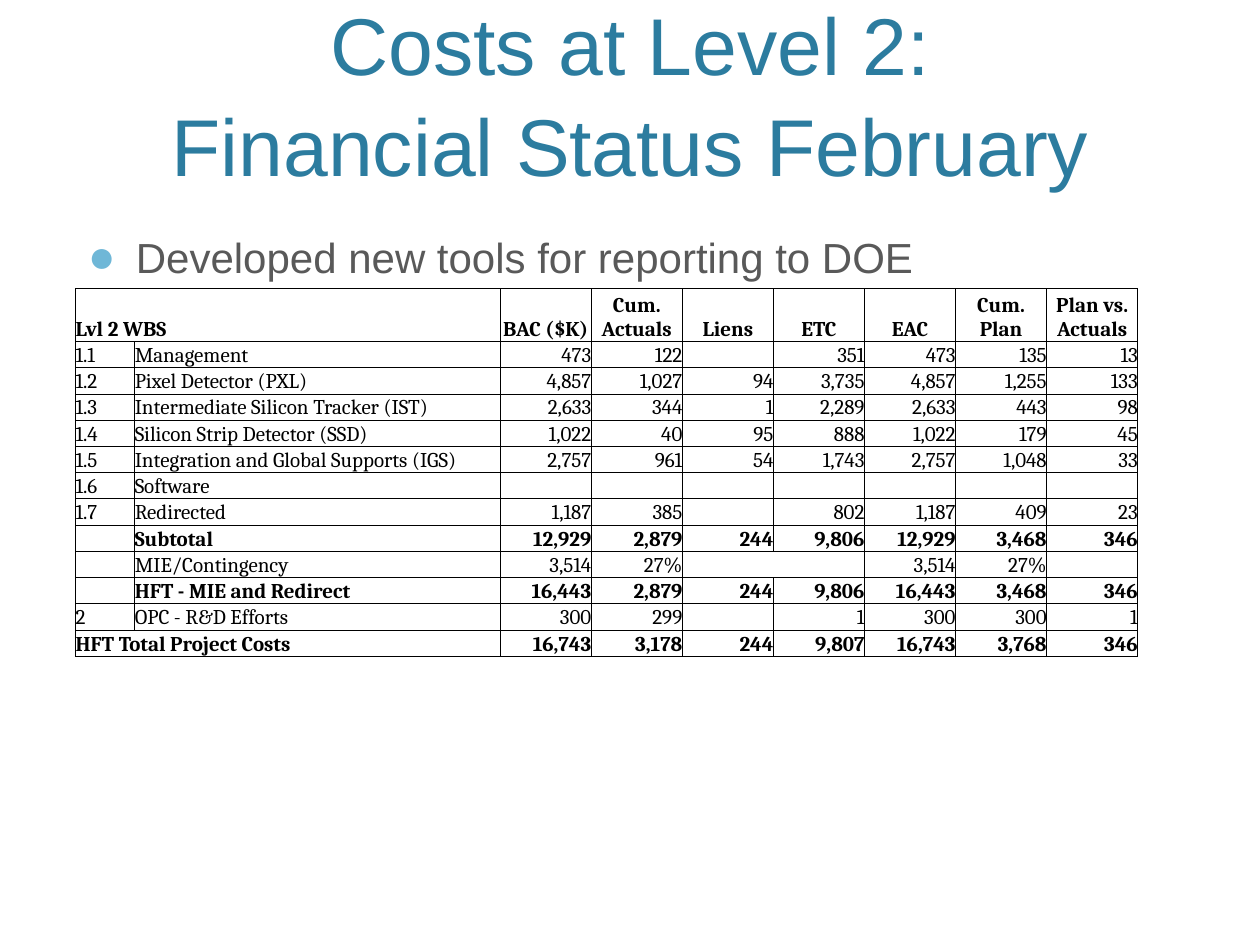
from lxml.etree import SubElement
from pptx import Presentation
from pptx.dml.color import RGBColor
from pptx.enum.text import MSO_ANCHOR, MSO_AUTO_SIZE, PP_ALIGN
from pptx.oxml.ns import qn
from pptx.util import Inches, Pt

TITLE = {"size": Pt(46), "name": "Arial", "bold": False}
BULLET = {"size": Pt(24), "name": "Arial", "bold": False}
CELL = {"size": Pt(12), "name": "Cambria"}
MARGINS = ("margin_left", "margin_top", "margin_right", "margin_bottom")

COSTS = [
    ["Lvl 2 WBS", "", "BAC ($K)", "Cum. Actuals", "Liens", "ETC", "EAC", "Cum. Plan", "Plan vs. Actuals"],
    ["1.1", "Management", "473", "122", "", "351", "473", "135", "13"],
    ["1.2", "Pixel Detector (PXL)", "4,857", "1,027", "94", "3,735", "4,857", "1,255", "133"],
    ["1.3", "Intermediate Silicon Tracker (IST)", "2,633", "344", "1", "2,289", "2,633", "443", "98"],
    ["1.4", "Silicon Strip Detector (SSD)", "1,022", "40", "95", "888", "1,022", "179", "45"],
    ["1.5", "Integration and Global Supports (IGS)", "2,757", "961", "54", "1,743", "2,757", "1,048", "33"],
    ["1.6", "Software", "", "", "", "", "", "", ""],
    ["1.7", "Redirected", "1,187", "385", "", "802", "1,187", "409", "23"],
    ["", "Subtotal", "12,929", "2,879", "244", "9,806", "12,929", "3,468", "346"],
    ["", "MIE/Contingency", "3,514", "27%", "", "", "3,514", "27%", ""],
    ["", "HFT - MIE and Redirect", "16,443", "2,879", "244", "9,806", "16,443", "3,468", "346"],
    ["2", "OPC - R&D Efforts", "300", "299", "", "1", "300", "300", "1"],
    ["HFT Total Project Costs", "", "16,743", "3,178", "244", "9,807", "16,743", "3,768", "346"],
]
BOLD_ROWS = {0, 8, 10, 12}
SPANNED_ROWS = (0, 12)
OPEN_SIDES = {(9, 4): "R", (9, 5): "L"}


def rgb(color):
    """Turn a hex string into a colour."""
    return RGBColor.from_string(color)


def set_font(font, formats, color):
    """Apply a dict of font values and a colour."""
    for key, value in formats.items():
        setattr(font, key, value)
    font.color.rgb = rgb(color)


def add_title(s, text, x, y, w, h):
    """Place and format the title placeholder in its box."""
    sp = s.shapes.title
    sp.left, sp.top, sp.width, sp.height = map(Inches, (x, y, w, h))
    tf = sp.text_frame
    tf.text = text
    tf.auto_size = MSO_AUTO_SIZE.NONE
    tf.vertical_anchor = MSO_ANCHOR.BOTTOM
    p = tf.paragraphs[0]
    p.alignment = PP_ALIGN.CENTER
    p.line_spacing = 1.05
    for r in p.runs:
        set_font(r.font, TITLE, "2C7C9F")


def add_bullet(s, text, x, y, w, h):
    """Place a bulleted statement in its box."""
    tf = s.shapes.add_textbox(*map(Inches, (x, y, w, h))).text_frame
    tf.word_wrap = True
    p = tf.paragraphs[0]
    p.line_spacing = 1.1
    p.space_before = Pt(20)
    r = p.add_run()
    r.text = text
    set_font(r.font, BULLET, "595959")
    pPr = p._p.get_or_add_pPr()
    pPr.set("marL", str(Inches(0.38)))
    pPr.set("indent", str(Inches(-0.38)))
    SubElement(SubElement(pPr, qn("a:buClr")), qn("a:srgbClr"), val="6FB7D7")
    SubElement(pPr, qn("a:buSzPct"), val="110000")
    SubElement(pPr, qn("a:buFont"), typeface="Arial")
    SubElement(pPr, qn("a:buChar"), char="●")


def set_borders(cell, open_side):
    """Draw thin black cell borders except on the open side."""
    tcPr = cell._tc.get_or_add_tcPr()
    for side in "LRTB":
        ln = SubElement(tcPr, qn(f"a:ln{side}"), w=str(Pt(0.5)))
        if side == open_side:
            SubElement(ln, qn("a:noFill"))
        else:
            fill = SubElement(ln, qn("a:solidFill"))
            SubElement(fill, qn("a:srgbClr"), val="000000")


def fill_cell(cell, text, align, bold):
    """Write one cell with its alignment and weight."""
    for margin in MARGINS:
        setattr(cell, margin, 0)
    cell.vertical_anchor = MSO_ANCHOR.BOTTOM
    cell.fill.solid()
    cell.fill.fore_color.rgb = rgb("FFFFFF")
    p = cell.text_frame.paragraphs[0]
    p.alignment = align
    if text:
        r = p.add_run()
        r.text = text
        set_font(r.font, {**CELL, "bold": bold}, "000000")
    else:
        SubElement(p._p, qn("a:endParaRPr"), sz="1200")


def add_cost_table(s, rows, x, y, w, h):
    """Build the cost table in its box."""
    n_rows, n_cols = len(rows), len(rows[0])
    table = s.shapes.add_table(n_rows, n_cols, *map(Inches, (x, y, w, h))).table
    table.first_row = table.horz_banding = False
    code_w, name_w, head_h = 0.47, 2.9, 0.42
    widths = [code_w, name_w] + [(w - code_w - name_w) / (n_cols - 2)] * (n_cols - 2)
    heights = [head_h] + [(h - head_h) / (n_rows - 1)] * (n_rows - 1)
    for col, width in zip(table.columns, widths):
        col.width = Inches(width)
    for row, height in zip(table.rows, heights):
        row.height = Inches(height)
    for i, row in enumerate(rows):
        for j, text in enumerate(row):
            number_align = PP_ALIGN.RIGHT if i else PP_ALIGN.CENTER
            align = PP_ALIGN.LEFT if j < 2 else number_align
            cell = table.cell(i, j)
            set_borders(cell, OPEN_SIDES.get((i, j)))
            fill_cell(cell, text, align, i in BOLD_ROWS)
    for i in SPANNED_ROWS:
        table.cell(i, 0).merge(table.cell(i, 1))


def main():
    """Build and save the cost slide."""
    prs = Presentation()
    prs.slide_width, prs.slide_height = Inches(10), Inches(7.5)
    s = prs.slides.add_slide(prs.slide_layouts[5])
    add_title(s, "Costs at Level 2:\vFinancial Status February", 0.6, 0.12, 8.8, 1.46)
    add_bullet(s, "Developed new tools for reporting to DOE", 0.6, 1.75, 8.8, 4.75)
    add_cost_table(s, COSTS, 0.6, 2.29, 8.43, 2.92)
    prs.save("out.pptx")


if __name__ == "__main__":
    main()
